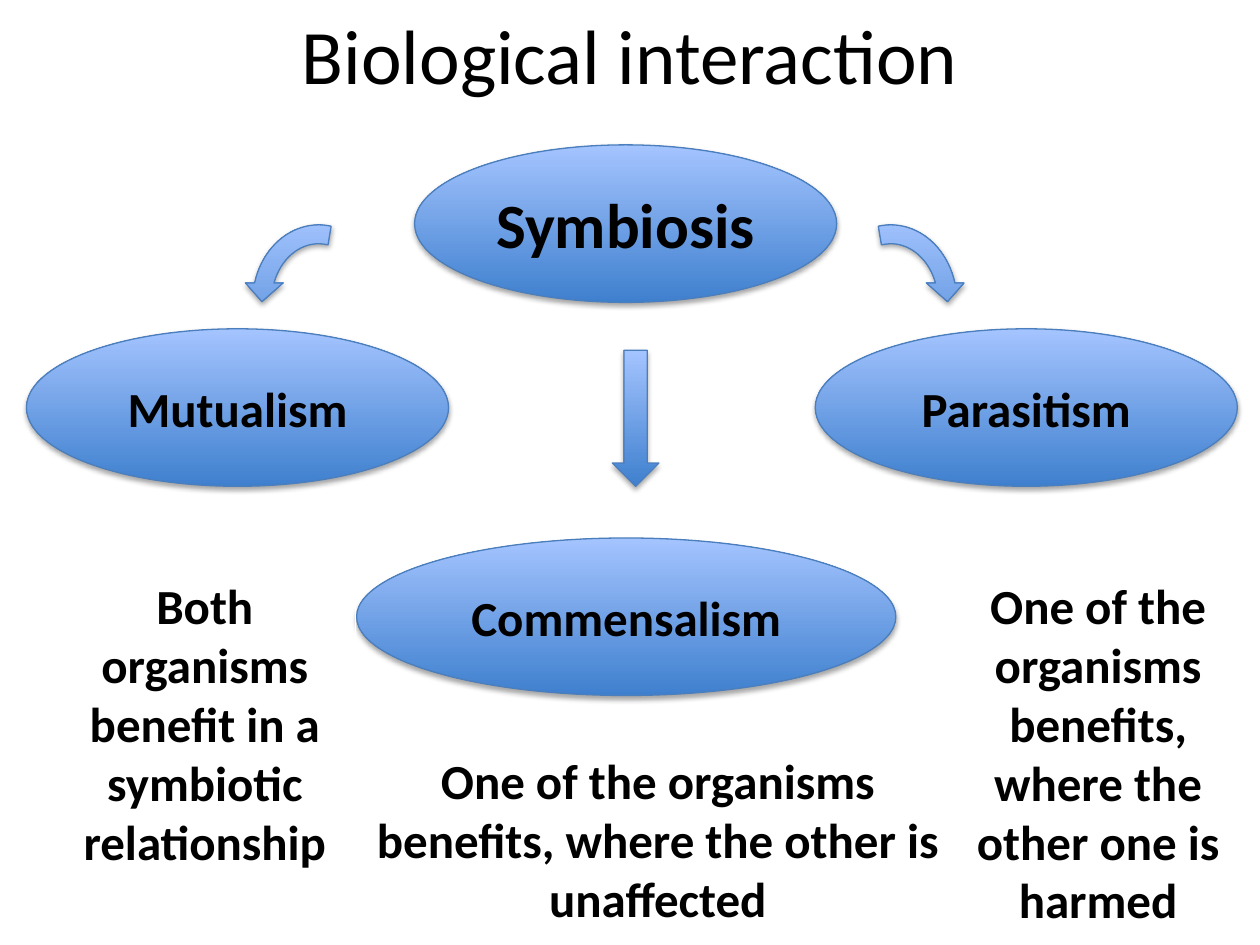
from pptx import Presentation
from pptx.dml.color import RGBColor
from pptx.enum.shapes import MSO_SHAPE
from pptx.enum.text import MSO_ANCHOR, PP_ALIGN
from pptx.oxml import parse_xml
from pptx.oxml.ns import nsdecls, qn
from pptx.util import Inches, Pt

THEME = {
    "font": "Calibri",
    "ink": RGBColor.from_string("000000"),
    "paper": RGBColor.from_string("FFFFFF"),
    "line": RGBColor.from_string("4B7EBC"),
    "gradient": ("3F80CE", "A4C4FF"),
    "line_width": Pt(0.75),
    "title": Pt(44),
    "heading": Pt(36),
    "body": Pt(28),
}
SHADOW = (
    f'<a:effectLst {nsdecls("a")}><a:outerShdw blurRad="39400" dist="23000" '
    'dir="5400000" rotWithShape="0"><a:srgbClr val="000000">'
    '<a:alpha val="35000"/></a:srgbClr></a:outerShdw></a:effectLst>'
)

deck = Presentation()
deck.slide_width, deck.slide_height = Inches(10), Inches(7.5)
page = deck.slides.add_slide(deck.slide_layouts[6])

# Grid of 100 columns by 75 rows
column, row = deck.slide_width / 100, deck.slide_height / 75


def write(box, text, size, anchor=MSO_ANCHOR.TOP, bold=True):
    frame = box.text_frame
    frame.word_wrap = True
    frame.vertical_anchor = anchor
    frame.text = text
    para = frame.paragraphs[0]
    para.alignment = PP_ALIGN.CENTER
    font = para.runs[0].font
    font.name, font.size, font.bold = THEME["font"], size, bold
    font.color.rgb = THEME["ink"]


def add_glossy(kind, left, top, width, height):
    shape = page.shapes.add_shape(
        kind, int(left * column), int(top * row), int(width * column), int(height * row))
    shape.fill.gradient()
    shape.fill.gradient_angle = 90
    for stop, position, color in zip(shape.fill.gradient_stops, (0, 1), THEME["gradient"]):
        stop.position = position
        stop.color.rgb = RGBColor.from_string(color)
    shape.line.color.rgb = THEME["line"]
    shape.line.width = THEME["line_width"]
    shape._element.spPr.append(parse_xml(SHADOW))
    return shape


# Title
title = page.shapes.add_textbox(
    int(5 * column), int(-3 * row), int(90 * column), int(14.6 * row))
write(title, "Biological interaction", THEME["title"], MSO_ANCHOR.MIDDLE, False)

# Symbiosis and its three kinds
for text, left, top, width, size in (
    ("Symbiosis", 32.9, 11.5, 33.5, THEME["heading"]),
    ("Commensalism", 28.3, 42.7, 42.8, THEME["body"]),
    ("Parasitism", 64.7, 26.1, 33.5, THEME["body"]),
    ("Mutualism", 2.1, 26.1, 33.5, THEME["body"]),
):
    ellipse = add_glossy(MSO_SHAPE.OVAL, left, top, width, 12.5)
    write(ellipse, text, size, MSO_ANCHOR.MIDDLE)

# Explanations, the outer two with a white outline
for text, left, top, width, height, outlined in (
    ("Both organisms benefit in a symbiotic relationship", 4.3, 45.2, 23.9, 24.6, True),
    ("One of the organisms benefits, where the other is unaffected",
     28.3, 59.1, 47.8, 15.1, False),
    ("One of the organisms benefits, where the other one is harmed",
     76.1, 45.2, 22.1, 29.3, True),
):
    box = page.shapes.add_textbox(
        int(left * column), int(top * row), int(width * column), int(height * row))
    if outlined:
        box.line.color.rgb = THEME["paper"]
        box.line.width = THEME["line_width"]
    write(box, text, THEME["body"])

# Arrows from symbiosis to each kind
add_glossy(MSO_SHAPE.DOWN_ARROW, 48.6, 27.8, 3.7, 10.8)
for left, flipped in ((64.7, False), (19.3, True)):
    arrow = add_glossy(MSO_SHAPE.CIRCULAR_ARROW, left, 17.1, 12, 13.7)
    for index, value in enumerate((0.125, 11.42, 204.58, 156.4, 0.125)):
        arrow.adjustments[index] = value
    if flipped:
        arrow._element.spPr.find(qn("a:xfrm")).set("flipH", "1")

deck.save("out.pptx")
